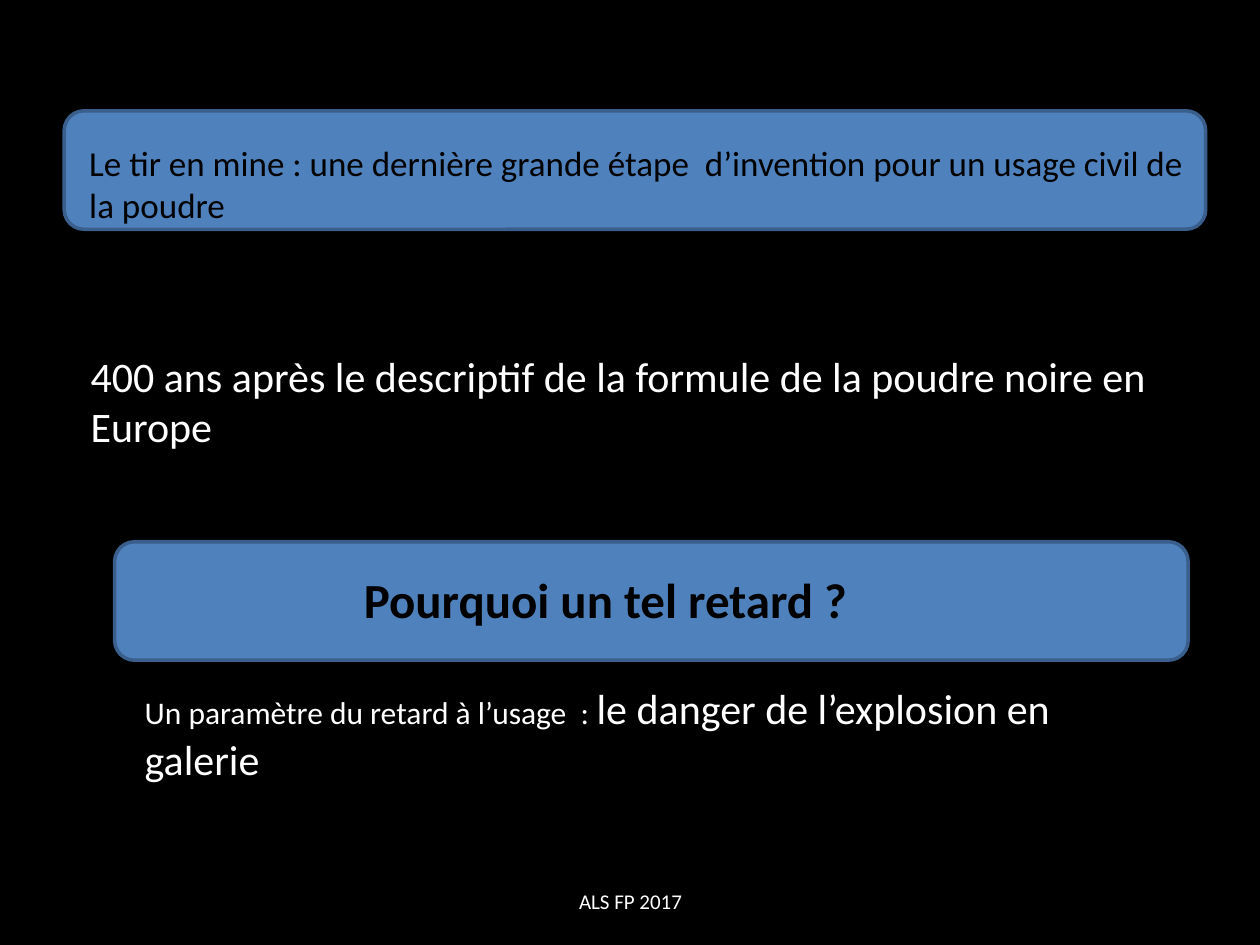
from dataclasses import dataclass

from pptx import Presentation
from pptx.dml.color import RGBColor
from pptx.enum.shapes import MSO_SHAPE
from pptx.enum.text import MSO_ANCHOR, PP_ALIGN
from pptx.util import Inches, Pt

ROUND = MSO_SHAPE.ROUNDED_RECTANGLE
LEFT, CENTER = PP_ALIGN.LEFT, PP_ALIGN.CENTER
TOP, MIDDLE = MSO_ANCHOR.TOP, MSO_ANCHOR.MIDDLE
FONT = "Calibri"
BLACK, WHITE, BLUE, EDGE = "000000", "FFFFFF", "4F81BD", "3A5F8C"


@dataclass
class Box:
    left: float
    top: float
    width: float
    height: float

    def place(self) -> list:
        return [Inches(n) for n in (self.left, self.top, self.width, self.height)]


def paint(color, code: str) -> None:
    color.rgb = RGBColor.from_string(code)


def add_panel(slide, box: Box) -> None:
    panel = slide.shapes.add_shape(ROUND, *box.place())
    panel.shadow.inherit = False
    panel.fill.solid()
    paint(panel.fill.fore_color, BLUE)
    paint(panel.line.color, EDGE)
    panel.line.width = Pt(2)


def add_text(slide, box: Box, *parts: tuple[str, int], color: str = WHITE,
             bold: bool = False, align=LEFT, anchor=TOP) -> None:
    """Each part is a run: its wording and its size in points."""
    frame = slide.shapes.add_textbox(*box.place()).text_frame
    frame.word_wrap = True
    frame.vertical_anchor = anchor
    para = frame.paragraphs[0]
    para.alignment = align
    for words, size in parts:
        run = para.add_run()
        run.text = words
        run.font.name = FONT
        run.font.size = Pt(size)
        run.font.bold = bold
        paint(run.font.color, color)


def main() -> None:
    deck = Presentation()
    deck.slide_width, deck.slide_height = Inches(10), Inches(7.5)
    slide = deck.slides.add_slide(deck.slide_layouts[6])
    slide.background.fill.solid()
    paint(slide.background.fill.fore_color, BLACK)

    # Title and question panels
    for box in (Box(0.51, 0.88, 9.06, 0.94), Box(0.91, 4.3, 8.52, 0.94)):
        add_panel(slide, box)

    # Panel wording
    add_text(slide, Box(0.61, 1.07, 9.11, 0.44),
             ("Le tir en mine : une dernière grande étape  d’invention "
              "pour un usage civil de la poudre", 20), color=BLACK)
    add_text(slide, Box(2.79, 4.47, 5.04, 0.57),
             ("Pourquoi un tel retard ?", 28), color=BLACK, bold=True)

    # Body text
    add_text(slide, Box(0.62, 2.73, 9.21, 0.5),
             ("400 ans après le descriptif de la formule de la poudre noire "
              "en Europe", 24))
    add_text(slide, Box(1.05, 5.37, 8.35, 0.5),
             ("Un paramètre du retard à l’usage  : ", 18),
             ("le danger de l’explosion en galerie", 24))

    # Footer
    add_text(slide, Box(3.42, 6.95, 3.17, 0.4), ("ALS FP 2017", 12),
             align=CENTER, anchor=MIDDLE)

    deck.save("out.pptx")


if __name__ == "__main__":
    main()
